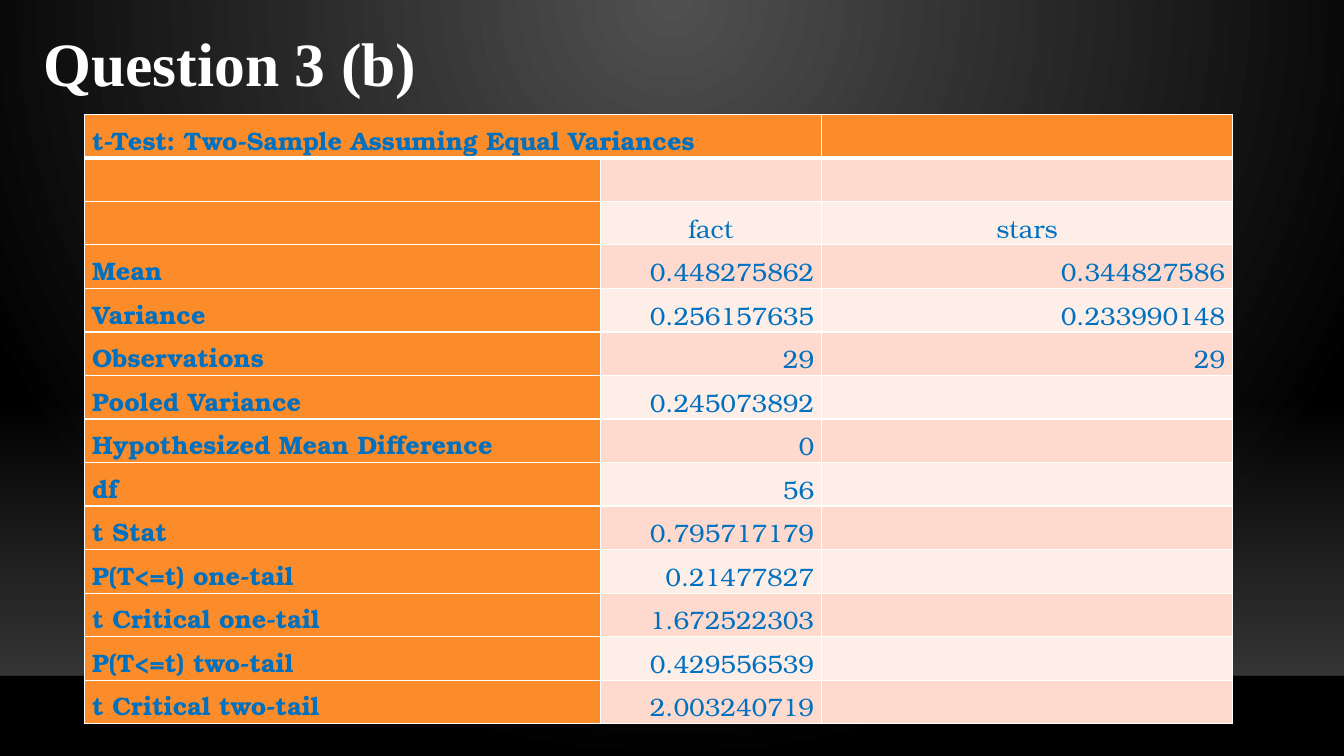
from dataclasses import dataclass

from lxml import etree
from pptx import Presentation
from pptx.dml.color import RGBColor
from pptx.enum import shapes, text
from pptx.oxml import ns
from pptx.util import Pt


@dataclass(frozen=True)
class Theme:
    """Colours, fonts and type sizes of the slide."""
    glow: str = "505050"
    dark: str = "000000"
    floor: str = "454545"
    horizon: str = "000001"
    white: str = "FFFFFF"
    label_fill: str = "FB8C29"
    bands: tuple = ("FDDACD", "FEEEE8")
    table_text: str = "0070C0"
    title_font: str = "Times New Roman"
    table_font: str = "TeX Gyre Bonum"
    title_size: int = 44
    table_size: int = 18


THEME = Theme()
HEADING = "t-Test: Two-Sample Assuming Equal Variances"
RESULTS = [
    ("", "", ""),
    ("", "fact", "stars"),
    ("Mean", "0.448275862", "0.344827586"),
    ("Variance", "0.256157635", "0.233990148"),
    ("Observations", "29", "29"),
    ("Pooled Variance", "0.245073892", ""),
    ("Hypothesized Mean Difference", "0", ""),
    ("df", "56", ""),
    ("t Stat", "0.795717179", ""),
    ("P(T<=t) one-tail", "0.21477827", ""),
    ("t Critical one-tail", "1.672522303", ""),
    ("P(T<=t) two-tail", "0.429556539", ""),
    ("t Critical two-tail", "2.003240719", ""),
]


def rgb(colour):
    """Turn a hex string into a colour."""
    return RGBColor.from_string(colour)


def add_child(parent, tag, **attributes):
    """Append a DrawingML element and return it."""
    return etree.SubElement(parent, ns.qn(tag), attributes)


def set_opacity(parent, percents):
    """Give each colour under the parent its opacity in percent."""
    for colour, percent in zip(parent.iter(ns.qn("a:srgbClr")), percents):
        add_child(colour, "a:alpha", val=str(percent * 1000))


def set_gradient(fill, start, end):
    """Apply a gradient with two stops running from start to end."""
    fill.gradient()
    for stop, colour, position in zip(fill.gradient_stops, (start, end), (0, 1)):
        stop.color.rgb = rgb(colour)
        stop.position = position


def style_run(run, font, size, colour, bold):
    """Set the font of a run."""
    run.font.name, run.font.size, run.font.bold = font, Pt(size), bold
    run.font.color.rgb = rgb(colour)


def draw_backdrop(slide, left, top, width, height):
    """Light the background from the top centre and add the floor band."""
    set_gradient(slide.background.fill, THEME.glow, THEME.dark)
    glow = next(slide.element.iter(ns.qn("a:gradFill")))
    glow.remove(glow.find(ns.qn("a:lin")))
    circle = add_child(glow, "a:path")
    circle.set("path", "circle")
    add_child(circle, "a:fillToRect", l="43000", t="0", r="43000", b="100000")

    floor = slide.shapes.add_shape(
        shapes.MSO_SHAPE.RECTANGLE, Pt(left), Pt(top), Pt(width), Pt(height))
    floor.shadow.inherit = False
    floor.line.fill.background()
    set_gradient(floor.fill, THEME.floor, THEME.floor)
    floor.fill.gradient_angle = 270
    set_opacity(floor.element.spPr, (0, 80))

    edge = Pt(top + height)
    horizon = slide.shapes.add_connector(
        shapes.MSO_CONNECTOR.STRAIGHT, Pt(left), edge, Pt(left + width), edge)
    horizon.line.color.rgb = rgb(THEME.horizon)
    horizon.line.width = Pt(1)
    set_opacity(horizon.element.spPr, (20,))
    add_child(horizon.element.spPr, "a:effectLst")


def draw_title(slide, left, top, width, height):
    """Write the slide title."""
    title = slide.shapes.add_textbox(Pt(left), Pt(top), Pt(width), Pt(height))
    frame = title.text_frame
    frame.word_wrap = True
    frame.vertical_anchor = text.MSO_ANCHOR.MIDDLE
    frame.text = "Question 3 (b)"
    style_run(frame.paragraphs[0].runs[0], THEME.title_font, THEME.title_size,
              THEME.white, True)


def style_cell(cell, wording, fill, align, bold, top_line=1, bottom_line=1):
    """Fill, border and write one table cell."""
    properties = cell._tc.get_or_add_tcPr()
    sides = {"L": 1, "R": 1, "T": top_line, "B": bottom_line}
    for side, weight in sides.items():
        border = add_child(properties, f"a:ln{side}", w=str(Pt(weight)))
        add_child(add_child(border, "a:solidFill"), "a:srgbClr", val=THEME.white)
    cell.fill.solid()
    cell.fill.fore_color.rgb = rgb(fill)
    cell.margin_left = cell.margin_right = Pt(5.4)
    cell.margin_top = cell.margin_bottom = 0
    cell.vertical_anchor = text.MSO_ANCHOR.BOTTOM
    cell.text_frame.text = wording
    paragraph = cell.text_frame.paragraphs[0]
    paragraph.alignment = align
    paragraph.line_spacing = 1.07
    for run in paragraph.runs:
        style_run(run, THEME.table_font, THEME.table_size, THEME.table_text, bold)


def draw_results(slide, left, top, width, height):
    """Lay out the t-test table in the given box."""
    row_count = len(RESULTS) + 1
    table = slide.shapes.add_table(
        row_count, 3, Pt(left), Pt(top), Pt(width), Pt(height)).table
    table.first_row = table.horz_banding = False
    for column, share in zip(table.columns, (0.449, 0.193, 0.358)):
        column.width = Pt(width * share)
    for row in table.rows:
        row.height = Pt(height / row_count)

    align = text.PP_ALIGN
    for column, wording in enumerate((HEADING, "", "")):
        style_cell(table.cell(0, column), wording, THEME.label_fill,
                   align.LEFT, True, bottom_line=3)
    table.cell(0, 0).merge(table.cell(0, 1))

    for index, (label, *values) in enumerate(RESULTS):
        top_line = 1 if index else 3
        style_cell(table.cell(index + 1, 0), label, THEME.label_fill,
                   align.LEFT, True, top_line)
        value_align = align.RIGHT if label else align.CENTER
        for column, value in enumerate(values, 1):
            style_cell(table.cell(index + 1, column), value,
                       THEME.bands[index % 2], value_align, False, top_line)


def main():
    """Build and save the slide."""
    deck = Presentation()
    deck.slide_width, deck.slide_height = Pt(960), Pt(540)
    slide = deck.slides.add_slide(deck.slide_layouts[6])
    draw_backdrop(slide, 0, 285.4, 960, 197.4)
    draw_results(slide, 60.5, 81.6, 820, 435.6)
    draw_title(slide, 24, 13.7, 328.3, 60.5)
    deck.save("out.pptx")


if __name__ == "__main__":
    main()
